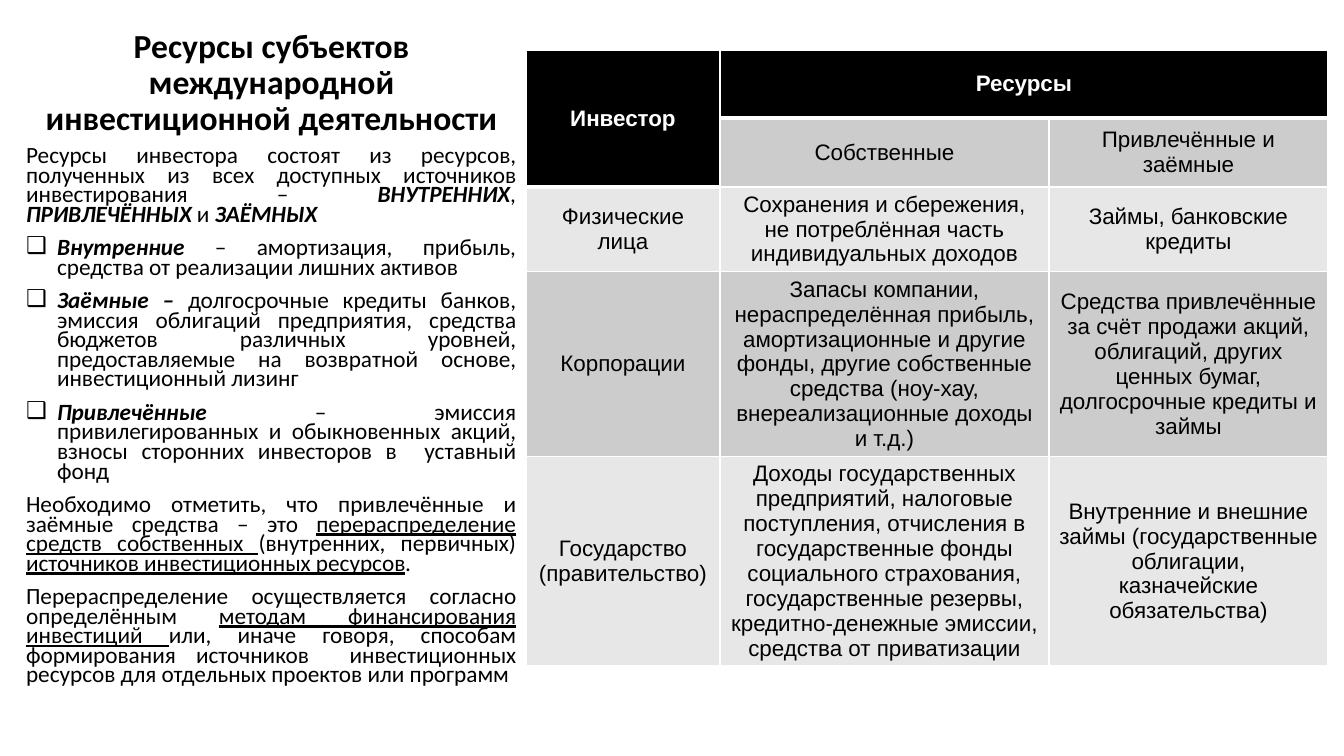
from lxml import etree
from pptx import Presentation
from pptx.dml.color import RGBColor
from pptx.enum.text import MSO_ANCHOR, MSO_AUTO_SIZE, PP_ALIGN
from pptx.oxml.ns import qn
from pptx.util import Emu, Pt

PX = 914400 / 100.8
BLACK = RGBColor(0, 0, 0)
WHITE = RGBColor(255, 255, 255)
DARK_BAND = RGBColor(0xCC, 0xCC, 0xCC)
LIGHT_BAND = RGBColor(0xE7, 0xE7, 0xE7)
CENTER = PP_ALIGN.CENTER
JUSTIFY = PP_ALIGN.JUSTIFY
MIDDLE = MSO_ANCHOR.MIDDLE
BOTTOM = MSO_ANCHOR.BOTTOM
NO_FIT = MSO_AUTO_SIZE.NONE

PLAIN, STRONG, LINED = "plain", "strong", "lined"
TITLE = "Ресурсы субъектов международной инвестиционной деятельности"
BODY = [
    ("", [("Ресурсы инвестора состоят из ресурсов, полученных из всех доступных "
           "источников инвестирования – ", PLAIN),
          ("ВНУТРЕННИХ", STRONG), (", ", PLAIN), ("ПРИВЛЕЧЁННЫХ", STRONG),
          (" и ", PLAIN), ("ЗАЁМНЫХ", STRONG)]),
    ("❑", [("Внутренние", STRONG),
           (" – амортизация, прибыль, средства от реализации лишних активов", PLAIN)]),
    ("❑", [("Заёмные –", STRONG),
           (" долгосрочные кредиты банков, эмиссия облигаций предприятия, средства "
            "бюджетов различных уровней, предоставляемые на возвратной основе, "
            "инвестиционный лизинг", PLAIN)]),
    ("❑", [("Привлечённые ", STRONG),
           ("– эмиссия привилегированных и обыкновенных акций, взносы сторонних "
            "инвесторов в  уставный фонд", PLAIN)]),
    ("", [("Необходимо отметить, что привлечённые и заёмные средства – это ", PLAIN),
          ("перераспределение средств собственных ", LINED),
          ("(внутренних, первичных) ", PLAIN),
          ("источников инвестиционных ресурсов", LINED), (".", PLAIN)]),
    ("", [("Перераспределение осуществляется согласно определённым ", PLAIN),
          ("методам финансирования инвестиций ", LINED),
          ("или, иначе говоря, способам формирования источников  инвестиционных "
           "ресурсов для отдельных проектов или программ", PLAIN)]),
]
COLUMNS = [194, 329, 279]
ROWS = [
    (68, ["Инвестор", "Ресурсы", ""]),
    (69, ["", "Собственные", "Привлечённые и заёмные"]),
    (84, ["Физические лица",
          "Сохранения и сбережения, не потреблённая часть индивидуальных доходов",
          "Займы, банковские кредиты"]),
    (185, ["Корпорации",
           "Запасы компании, нераспределённая прибыль, амортизационные и другие фонды, "
           "другие собственные средства (ноу-хау, внереализационные доходы и т.д.)",
           "Средства привлечённые за счёт продажи акций, облигаций, других ценных бумаг, "
           "долгосрочные кредиты и займы"]),
    (209, ["Государство (правительство)",
           "Доходы государственных предприятий, налоговые поступления, отчисления в "
           "государственные фонды социального страхования, государственные резервы, "
           "кредитно-денежные эмиссии, средства от приватизации",
           "Внутренние и внешние займы (государственные облигации, казначейские "
           "обязательства)"]),
]


def px(length):
    """Turn pixels into EMU."""
    return Emu(round(length * PX))


def place(shape, left, top, width, height):
    """Move and size a shape, in pixels."""
    shape.left, shape.top = px(left), px(top)
    shape.width, shape.height = px(width), px(height)


def set_font(font, name, size, color, bold=False):
    """Set the main features of a font."""
    font.name, font.size, font.bold = name, Pt(size), bold
    font.color.rgb = color


def set_bullet(para, symbol):
    """Give a paragraph its bullet and hanging indent, or neither."""
    properties = para._p.get_or_add_pPr()
    indent = px(31) if symbol else 0
    properties.set("marL", str(indent))
    properties.set("indent", str(-indent))
    if symbol:
        bullet = etree.Element(qn("a:buChar"), char=symbol)
    else:
        bullet = etree.Element(qn("a:buNone"))
    default_font = properties.find(qn("a:defRPr"))
    default_font.addprevious(bullet)


def fill_title(title):
    """Write the slide title."""
    place(title, 25, 22, 493, 121)
    frame = title.text_frame
    frame.text = TITLE
    frame.auto_size, frame.vertical_anchor = NO_FIT, BOTTOM
    para = frame.paragraphs[0]
    para.alignment, para.line_spacing = CENTER, 0.9
    set_font(para.font, "Calibri", 24, BLACK, True)


def fill_body(body):
    """Write the explanatory paragraphs and the bulleted list."""
    place(body, 16, 143, 510, 613)
    frame = body.text_frame
    frame.auto_size = NO_FIT
    for index, (symbol, spans) in enumerate(BODY):
        para = frame.add_paragraph() if index else frame.paragraphs[0]
        para.alignment, para.line_spacing = JUSTIFY, 0.7
        para.space_before = Pt(10)
        set_font(para.font, "Calibri", 16.6, BLACK)
        set_bullet(para, symbol)
        for text, style in spans:
            span = para.add_run()
            span.text = text
            if style == STRONG:
                span.font.bold = span.font.italic = True
            elif style == LINED:
                span.font.underline = True


def is_header(row, column):
    """Tell whether a cell belongs to the black header."""
    return row == 0 or (row == 1 and column == 0)


def set_borders(cell, widths):
    """Draw white cell borders, with widths in points by side."""
    properties = cell._tc.get_or_add_tcPr()
    for index, (side, width) in enumerate(widths.items()):
        line = etree.Element(qn(f"a:ln{side}"), w=str(Pt(width)))
        fill = etree.SubElement(line, qn("a:solidFill"))
        etree.SubElement(fill, qn("a:srgbClr"), val=str(WHITE))
        properties.insert(index, line)


def fill_cell(cell, text, row, column):
    """Write and format one table cell."""
    header = is_header(row, column)
    band = DARK_BAND if row % 2 else LIGHT_BAND
    cell.text = text
    cell.vertical_anchor = MIDDLE
    cell.fill.solid()
    cell.fill.fore_color.rgb = BLACK if header else band
    para = cell.text_frame.paragraphs[0]
    para.alignment = CENTER
    set_font(para.font, "Arial", 16, WHITE if header else BLACK, header)
    below_header = not header and is_header(row - 1, column)
    set_borders(cell, {"L": 1, "R": 1, "T": 3 if below_header else 1,
                       "B": 3 if header else 1})


def add_resource_table(page):
    """Add the table of investors and their resources."""
    heights = [height for height, _ in ROWS]
    frame = page.shapes.add_table(len(ROWS), len(COLUMNS), px(526), px(50),
                                  px(sum(COLUMNS)), px(sum(heights)))
    table = frame.table
    for column, width in zip(table.columns, COLUMNS):
        column.width = px(width)
    for row, (height, texts) in enumerate(ROWS):
        table.rows[row].height = px(height)
        for column, text in enumerate(texts):
            fill_cell(table.cell(row, column), text, row, column)
    table.cell(0, 0).merge(table.cell(1, 0))
    table.cell(0, 1).merge(table.cell(0, 2))


def main():
    """Build the slide and save it."""
    deck = Presentation()
    deck.slide_width, deck.slide_height = px(1344), px(756)
    page = deck.slides.add_slide(deck.slide_layouts[1])
    fill_title(page.shapes.title)
    add_resource_table(page)
    fill_body(page.placeholders[1])
    deck.save("out.pptx")


if __name__ == "__main__":
    main()
